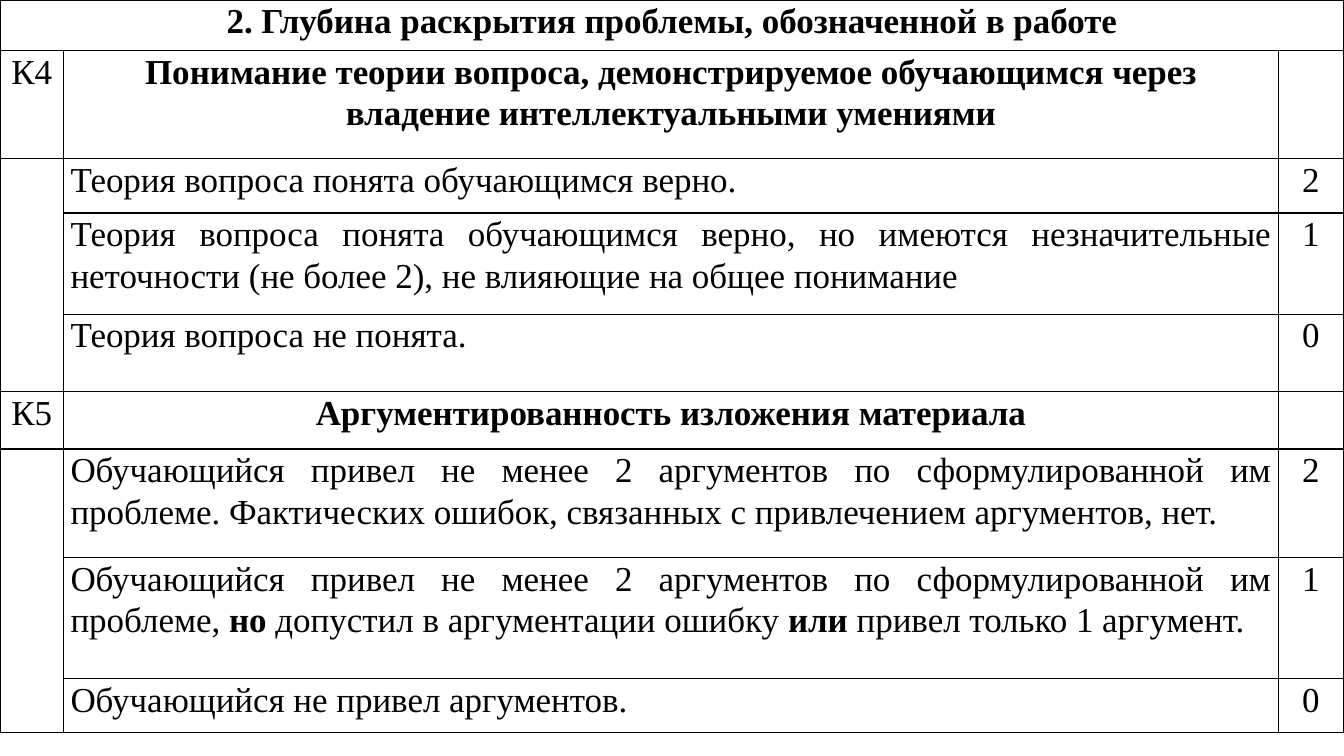
"""Build a slide with the scoring criteria for the depth of a student paper."""
from lxml import etree
from pptx import Presentation
from pptx import util as u
from pptx.dml import color
from pptx.enum import text
from pptx.oxml import ns

BLACK = color.RGBColor(0x00, 0x00, 0x00)
CENTER = text.PP_ALIGN.CENTER
JUSTIFY = text.PP_ALIGN.JUSTIFY

HEADING = "2. Глубина раскрытия проблемы, обозначенной в работе"
CRITERIA = [
    ("К4", "Понимание теории вопроса, демонстрируемое обучающимся через "
           "владение интеллектуальными умениями", [
        ("Теория вопроса понята обучающимся верно.", "2"),
        ("Теория вопроса понята обучающимся верно, но имеются незначительные "
         "неточности (не более 2), не влияющие на общее понимание", "1"),
        ("Теория вопроса не понята.", "0"),
    ]),
    ("К5", "Аргументированность изложения материала", [
        ("Обучающийся привел не менее 2 аргументов по сформулированной им "
         "проблеме. Фактических ошибок, связанных с привлечением аргументов, нет.", "2"),
        ("Обучающийся привел не менее 2 аргументов по сформулированной им "
         "проблеме, **но** допустил в аргументации ошибку **или** привел только "
         "1 аргумент.", "1"),
        ("Обучающийся не привел аргументов.", "0"),
    ]),
]
COLUMN_WIDTHS = [45.4, 867.6, 46.8]
ROW_HEIGHTS = [36, 77.5, 38.6, 72.3, 55.4, 41, 77.5, 86.4, 38.6]


class CriteriaSlide:
    """Hold the table style and the current slide."""

    font_name = "Times New Roman"
    font_size = u.Pt(25)
    line_spacing = 1.07
    side_margin = u.Pt(5)
    border_width = u.Pt(1)

    def __init__(self, deck):
        self.slide = deck.slides.add_slide(deck.slide_layouts[6])

    def grid(self, widths, heights):
        frame = self.slide.shapes.add_table(
            len(heights), len(widths), 0, 0, u.Pt(sum(widths)), u.Pt(sum(heights)))
        grid = frame.table
        grid.first_row = grid.horz_banding = False
        for column, width in zip(grid.columns, widths):
            column.width = u.Pt(width)
        for row, height in zip(grid.rows, heights):
            row.height = u.Pt(height)
        for cell in grid.iter_cells():
            cell.margin_left = cell.margin_right = self.side_margin
            cell.margin_top = cell.margin_bottom = 0
            self.borders(cell)
            cell.fill.background()
        return grid

    def borders(self, cell):
        properties = cell._tc.get_or_add_tcPr()
        for side in ("a:lnL", "a:lnR", "a:lnT", "a:lnB"):
            line = etree.SubElement(properties, ns.qn(side), w=str(self.border_width))
            paint = etree.SubElement(line, ns.qn("a:solidFill"))
            etree.SubElement(paint, ns.qn("a:srgbClr"), val=str(BLACK))

    def entry(self, cell, wording, align=CENTER, bold=False):
        paragraph = cell.text_frame.paragraphs[0]
        paragraph.alignment = align
        paragraph.line_spacing = self.line_spacing
        for index, part in enumerate(wording.split("**")):
            run = paragraph.add_run()
            run.text = part
            run.font.name = self.font_name
            run.font.size = self.font_size
            run.font.bold = bold or index % 2 == 1
            run.font.color.rgb = BLACK


def main():
    deck = Presentation()
    deck.slide_width, deck.slide_height = u.Pt(960), u.Pt(540)
    page = CriteriaSlide(deck)
    grid = page.grid(COLUMN_WIDTHS, ROW_HEIGHTS)

    grid.cell(0, 0).merge(grid.cell(0, 2))
    page.entry(grid.cell(0, 0), HEADING, bold=True)
    row = 1
    for code, criterion, levels in CRITERIA:
        page.entry(grid.cell(row, 0), code)
        page.entry(grid.cell(row, 1), criterion, bold=True)
        grid.cell(row + 1, 0).merge(grid.cell(row + len(levels), 0))
        for level_row, (description, score) in enumerate(levels, row + 1):
            page.entry(grid.cell(level_row, 1), description, JUSTIFY)
            page.entry(grid.cell(level_row, 2), score)
        row += 1 + len(levels)

    deck.save("out.pptx")


if __name__ == "__main__":
    main()
